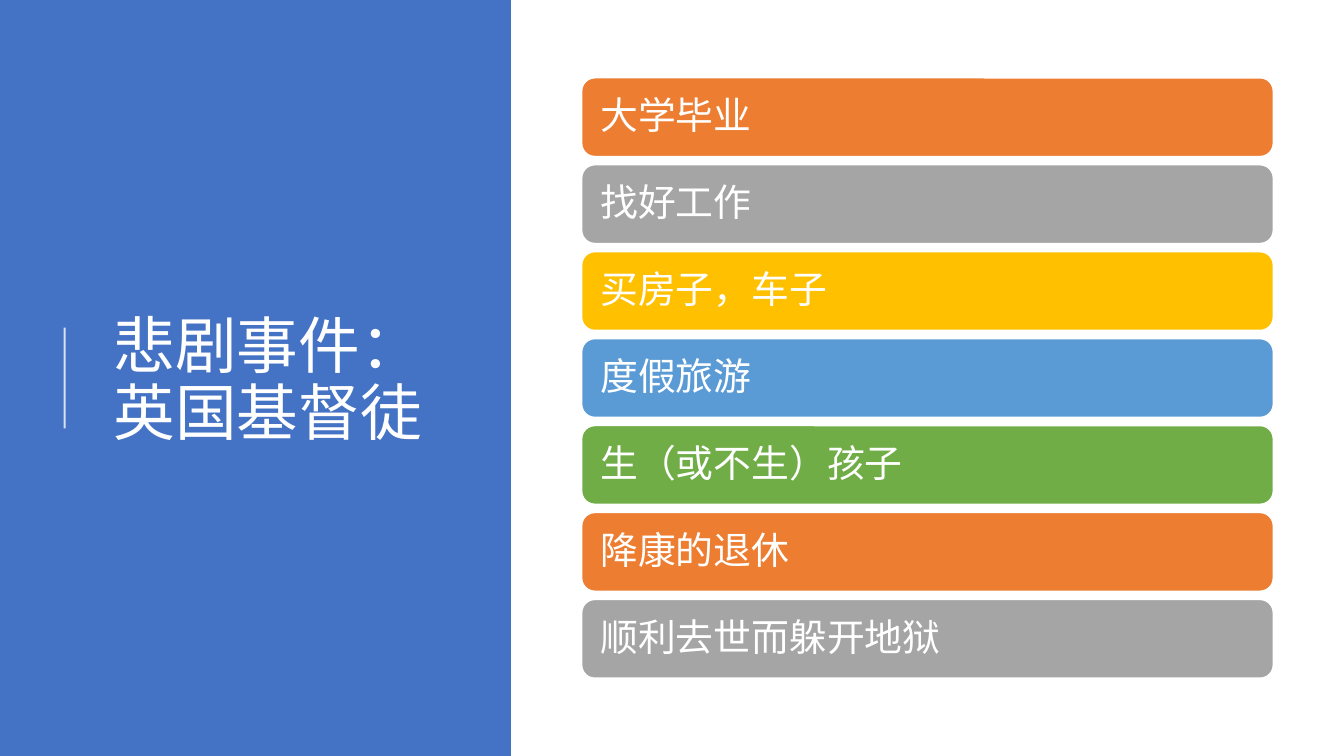
"""Build a slide with a title panel and a stack of seven coloured bars."""
from lxml import etree
from pptx import Presentation, util as u
from pptx.dml.color import RGBColor
from pptx.enum import shapes, text
from pptx.oxml.ns import qn

TITLE = "悲剧事件：英国基督徒"
EVENTS = [
    "大学毕业",
    "找好工作",
    "买房子，车子",
    "度假旅游",
    "生（或不生）孩子",
    "降康的退休",
    "顺利去世而躲开地狱",
]
BAR_COLOURS = ["ED7D31", "A5A5A5", "FFC000", "5B9BD5", "70AD47"]
WHITE, BLUE = "FFFFFF", "4472C4"

SLIDE = (960, 540)
PANEL = (0, 0, 365, 540)
TITLE_BOX = (74.2, 56.2, 265.7, 433.4)
RULE = (46.2, 306, 46.2, 234)
BAR_LEFT, BAR_TOP, BAR_WIDTH, BAR_HEIGHT, BAR_PITCH = 415.5, 55.6, 494, 56.2, 62.1

TITLE_FORMAT = {"line_spacing": 0.9, "alignment": text.PP_ALIGN.LEFT}
BAR_FORMAT = {**TITLE_FORMAT, "space_after": u.Pt(4)}
TITLE_FRAME = {"word_wrap": True, "vertical_anchor": text.MSO_ANCHOR.MIDDLE}
BAR_FRAME = {
    **TITLE_FRAME,
    "margin_left": u.Pt(10.6),
    "margin_right": u.Pt(10.6),
    "margin_top": u.Pt(7.9),
    "margin_bottom": u.Pt(7.9),
}


def points(values):
    return [u.Pt(value) for value in values]


def paint(colour_format, colour):
    colour_format.rgb = RGBColor.from_string(colour)


def apply(target, formats):
    for name, value in formats.items():
        setattr(target, name, value)


def add_block(slide, kind, box, colour):
    block = slide.shapes.add_shape(kind, *points(box))
    block.shadow.inherit = False
    block.fill.solid()
    paint(block.fill.fore_color, colour)
    return block


def write(frame, words, size, frame_format, paragraph_format):
    apply(frame, frame_format)
    paragraph = frame.paragraphs[0]
    apply(paragraph, paragraph_format)
    run = paragraph.add_run()
    run.text = words
    apply(run.font, {"name": "Calibri", "size": u.Pt(size)})
    paint(run.font.color, WHITE)


def add_rule(slide):
    rule = slide.shapes.add_connector(shapes.MSO_CONNECTOR.STRAIGHT, *points(RULE))
    rule.line.width = u.Pt(1.5)
    paint(rule.line.color, WHITE)
    properties = rule._element.spPr
    colour = properties.find(".//" + qn("a:srgbClr"))
    etree.SubElement(colour, qn("a:alpha"), val="80000")
    etree.SubElement(properties, qn("a:effectLst"))


def main():
    deck = Presentation()
    deck.slide_width, deck.slide_height = points(SLIDE)
    slide = deck.slides.add_slide(deck.slide_layouts[6])

    panel = add_block(slide, shapes.MSO_SHAPE.RECTANGLE, PANEL, BLUE)
    panel.line.fill.background()
    title = slide.shapes.add_textbox(*points(TITLE_BOX))
    write(title.text_frame, TITLE, 44, TITLE_FRAME, TITLE_FORMAT)
    add_rule(slide)

    for row, event in enumerate(EVENTS):
        box = (BAR_LEFT, BAR_TOP + row * BAR_PITCH, BAR_WIDTH, BAR_HEIGHT)
        colour = BAR_COLOURS[row % len(BAR_COLOURS)]
        bar = add_block(slide, shapes.MSO_SHAPE.ROUNDED_RECTANGLE, box, colour)
        bar.line.width = u.Pt(1)
        paint(bar.line.color, WHITE)
        write(bar.text_frame, event, 27, BAR_FRAME, BAR_FORMAT)

    deck.save("out.pptx")


if __name__ == "__main__":
    main()
